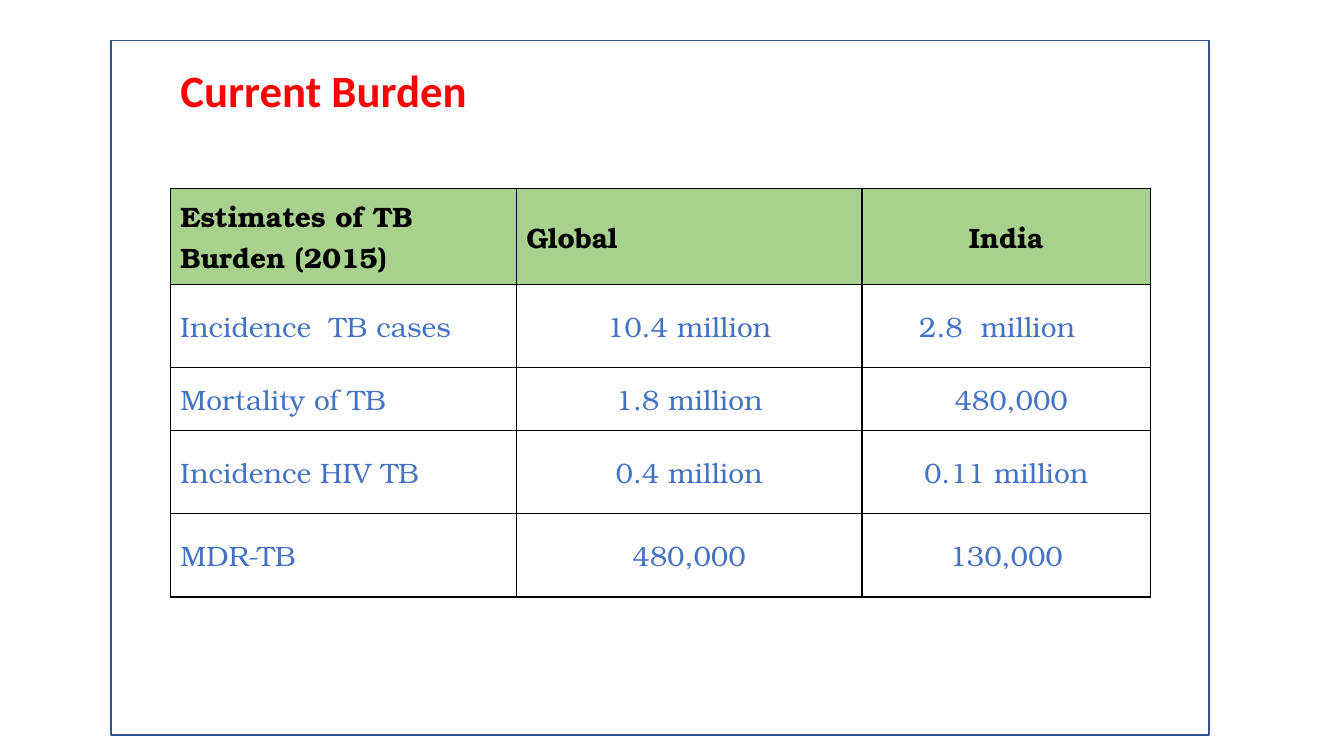
from lxml.etree import SubElement
from pptx import Presentation
from pptx.dml.color import RGBColor
from pptx.enum.shapes import MSO_SHAPE
from pptx.enum.text import MSO_ANCHOR, PP_ALIGN
from pptx.oxml.ns import qn
from pptx.util import Inches, Pt

COLORS = {
    "title": "FF0000",
    "frame": "325491",
    "header": "A9D18E",
    "body": "FFFFFF",
    "header_text": "000000",
    "body_text": "4472C4",
    "border": "000000",
}
ESTIMATES = [
    ["Estimates of TB Burden (2015)", "Global", "India"],
    ["Incidence  TB cases", "10.4 million", "2.8  million"],
    ["Mortality of TB", "1.8 million", "480,000"],
    ["Incidence HIV TB", "0.4 million", "0.11 million"],
    ["MDR-TB", "480,000", "130,000"],
]
COLUMN_SPANS = [34.3, 34.3, 28.6]
ROW_SPANS = [8.9, 8.2, 6.3, 8.2, 8.3]
MARGINS = {"2.8  million": (1, 2.8), ("480,000", 2): (2, 1)}


def color(name):
    return RGBColor.from_string(COLORS[name])


def write(frame, text, *, font, size, ink, bold=False, align=PP_ALIGN.LEFT, spacing=1.0):
    frame.word_wrap = True
    paragraph = frame.paragraphs[0]
    paragraph.alignment = align
    paragraph.line_spacing = spacing
    run = paragraph.add_run()
    run.text = text
    run.font.name = font
    run.font.size = Pt(size)
    run.font.bold = bold
    run.font.color.rgb = color(ink)


class BurdenSlide:
    title_font = "Calibri"
    table_font = "TeX Gyre Bonum"

    def __init__(self, deck):
        self.unit = Inches(0.1)
        self.slide = deck.slides.add_slide(deck.slide_layouts[5])

    def span(self, *counts):
        return [round(count * self.unit) for count in counts]

    def title(self, text, *box):
        heading = self.slide.shapes.title
        heading.left, heading.top, heading.width, heading.height = self.span(*box)
        heading.text_frame.vertical_anchor = MSO_ANCHOR.MIDDLE
        write(heading.text_frame, text, font=self.title_font, size=32,
              ink="title", bold=True, spacing=0.9)

    def frame(self, *box):
        outline = self.slide.shapes.add_shape(MSO_SHAPE.RECTANGLE, *self.span(*box))
        outline.shadow.inherit = False
        outline.fill.background()
        outline.line.color.rgb = color("frame")
        outline.line.width = Pt(1)

    def borders(self, cell):
        properties = cell._tc.get_or_add_tcPr()
        for position, side in enumerate(("a:lnL", "a:lnR", "a:lnT", "a:lnB")):
            line = SubElement(properties, qn(side), w=str(Pt(1)))
            properties.insert(position, line)
            fill = SubElement(line, qn("a:solidFill"))
            SubElement(fill, qn("a:srgbClr"), val=COLORS["border"])

    def cell(self, cell, text, row, column):
        header = row == 0
        left, right = MARGINS.get(text, MARGINS.get((text, column) if row == 2 else None, (1, 1)))
        cell.margin_left, cell.margin_right = self.span(left, right)
        cell.margin_top = cell.margin_bottom = Inches(0.07)
        cell.vertical_anchor = MSO_ANCHOR.MIDDLE
        cell.fill.solid()
        cell.fill.fore_color.rgb = color("header" if header else "body")
        self.borders(cell)
        centred = column == 2 or (column == 1 and not header)
        write(cell.text_frame, text, font=self.table_font, size=20, bold=header,
              ink="header_text" if header else "body_text",
              align=PP_ALIGN.CENTER if centred else PP_ALIGN.LEFT)

    def table(self, rows, left, top):
        box = self.span(left, top, sum(COLUMN_SPANS), sum(ROW_SPANS))
        table = self.slide.shapes.add_table(len(rows), len(rows[0]), *box).table
        table.horz_banding = False
        for column, width in zip(table.columns, self.span(*COLUMN_SPANS)):
            column.width = width
        for row, height in zip(table.rows, self.span(*ROW_SPANS)):
            row.height = height
        for row, texts in enumerate(rows):
            for column, text in enumerate(texts):
                self.cell(table.cell(row, column), text, row, column)


def main():
    deck = Presentation()
    deck.slide_width, deck.slide_height = Inches(13.33), Inches(7.5)
    burden = BurdenSlide(deck)
    burden.title("Current Burden", 16.9, 4.1, 33.4, 10.2)
    burden.frame(11, 4, 108.9, 68.9)
    burden.table(ESTIMATES, 16.9, 18.7)
    deck.save("out.pptx")


if __name__ == "__main__":
    main()
